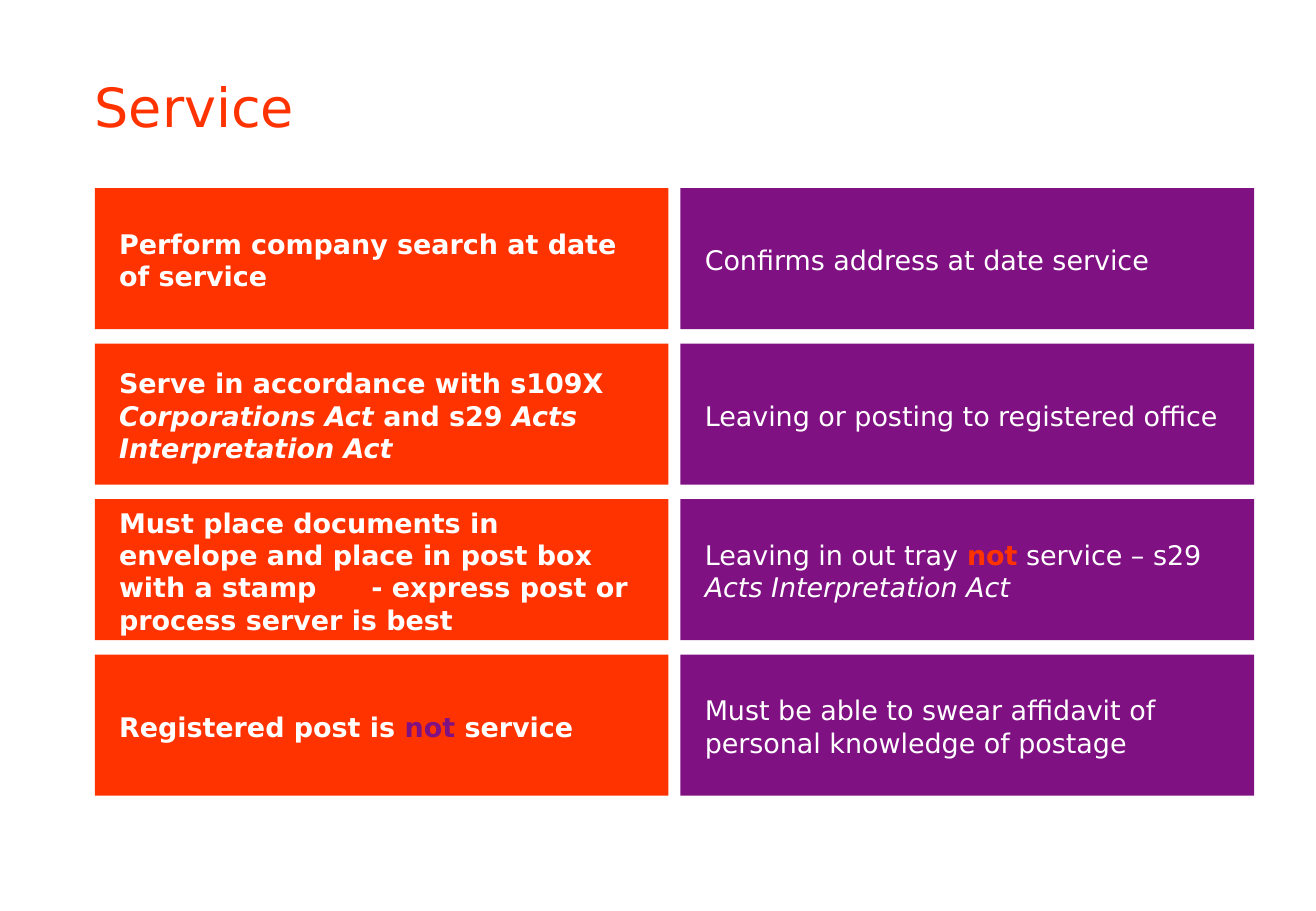
import pptx
import pptx.util
import pptx.dml.color
import pptx.enum.shapes
import pptx.enum.text

INK = {"red": "FF3300", "plum": "7F1183", "white": "FFFFFF"}
FONT = "DejaVu Sans"

ROWS = [
    ([("Perform company search at date of service", {})],
     [("Confirms address at date service", {})]),
    ([("Serve in accordance with s109X ", {}), ("Corporations Act", {"slant": True}),
      (" and s29 ", {}), ("Acts Interpretation Act", {"slant": True})],
     [("Leaving or posting to registered office", {})]),
    ([("Must place documents in envelope and place in post box with a stamp"
       "\t - express post or process server is best", {})],
     [("Leaving in out tray ", {}), ("not", {"ink": "red", "bold": True}),
      (" service – s29 ", {}), ("Acts Interpretation Act", {"slant": True})]),
    ([("Registered post is ", {}), ("not", {"ink": "plum"}), (" service", {})],
     [("Must be able to swear affidavit of personal knowledge of postage", {})]),
]


class Deck:
    left, top = 0.78, 1.55
    wide, high = 4.72, 1.16
    step, drop = 4.82, 1.28

    def __init__(self):
        self.show = pptx.Presentation()
        self.show.slide_width = pptx.util.Inches(10.83)
        self.show.slide_height = pptx.util.Inches(7.5)
        self.slide = self.show.slides.add_slide(self.show.slide_layouts[6])

    def color(self, name):
        return pptx.dml.color.RGBColor.from_string(INK[name])

    def style(self, run, size, ink="white", bold=False, slant=False):
        font = run.font
        font.name = FONT
        font.size = pptx.util.Pt(size)
        font.bold = bold
        font.italic = slant
        font.color.rgb = self.color(ink)

    def frame(self, shape, pads):
        body = shape.text_frame
        body.word_wrap = True
        body.vertical_anchor = pptx.enum.text.MSO_ANCHOR.MIDDLE
        (body.margin_left, body.margin_top,
         body.margin_right, body.margin_bottom) = map(pptx.util.Inches, pads)
        para = body.paragraphs[0]
        para.alignment = pptx.enum.text.PP_ALIGN.LEFT
        return para

    def title(self, text):
        spot = map(pptx.util.Inches, (self.left, 0.36, 9.53, 1.02))
        para = self.frame(self.slide.shapes.add_textbox(*spot), (0, 0, 0, 0))
        para.text = text
        self.style(para.runs[0], 32, "red")

    def card(self, col, row, fill, parts, bold):
        spot = map(pptx.util.Inches, (self.left + col * self.step,
                                      self.top + row * self.drop,
                                      self.wide, self.high))
        kind = pptx.enum.shapes.MSO_SHAPE.ROUNDED_RECTANGLE
        shape = self.slide.shapes.add_shape(kind, *spot)
        shape.adjustments[0] = 0
        shape.shadow.inherit = False
        shape.fill.solid()
        shape.fill.fore_color.rgb = self.color(fill)
        shape.line.fill.background()
        para = self.frame(shape, (0.2, 0.06, 0.2, 0.04))
        for text, look in parts:
            run = para.add_run()
            run.text = text
            self.style(run, 16, **{"bold": bold, **look})


def main():
    deck = Deck()
    deck.title("Service")
    for row, (task, note) in enumerate(ROWS):
        deck.card(0, row, "red", task, True)
        deck.card(1, row, "plum", note, False)
    deck.show.save("out.pptx")


if __name__ == "__main__":
    main()
